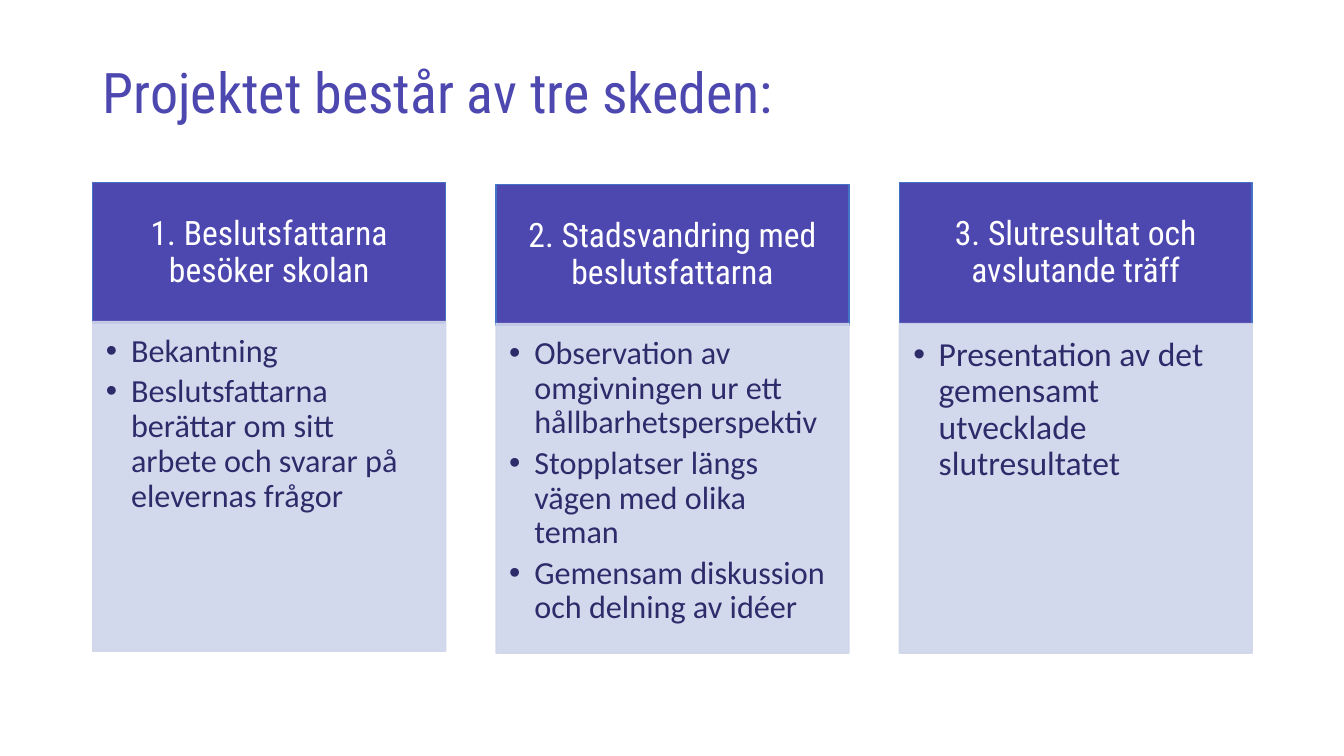
"""Build a slide that sets out the three stages of a school project."""
from lxml import etree
from pptx import Presentation
from pptx import util as u
from pptx.dml.color import RGBColor
from pptx.enum import shapes, text
from pptx.oxml.ns import qn

PX = 9144
COLORS = {"violet": "4D47B0", "edge": "4472C4", "panel": "CFD5EA",
          "ink": "2E2B6B", "white": "FFFFFF"}
COLUMN_LEFT, COLUMN_PITCH, COLUMN_WIDTH = 92, 400, 350
HEADER_HEIGHT, BODY_HEIGHT = 140, 327
STAGES = [
    {"heading": "1. Beslutsfattarna besöker skolan",
     "points": ["Bekantning",
                "Beslutsfattarna berättar om sitt arbete och svarar på elevernas frågor"],
     "header_top": 181, "body_top": 319, "size": 23, "insets": (13, 13, 18, 20)},
    {"heading": "2. Stadsvandring med beslutsfattarna",
     "points": ["Observation av omgivningen ur ett hållbarhetsperspektiv",
                "Stopplatser längs vägen med olika teman",
                "Gemensam diskussion och delning av idéer"],
     "header_top": 183, "body_top": 321, "size": 23, "insets": (13, 13, 18, 20)},
    {"heading": "3. Slutresultat och avslutande träff",
     "points": ["Presentation av det gemensamt utvecklade slutresultatet"],
     "header_top": 181, "body_top": 321, "size": 24, "insets": (14, 14, 19, 21)},
]


def px(length):
    return u.Emu(length * PX)


def color(name):
    return RGBColor.from_string(COLORS[name])


def apply(target, **values):
    for name, value in values.items():
        setattr(target, name, value)


def write(paragraph, words, font, size, ink):
    paragraph.line_spacing = 0.9
    run = paragraph.add_run()
    run.text = words
    apply(run.font, name=font, size=u.Pt(size))
    run.font.color.rgb = color(ink)


def add_title(slide, words):
    title = slide.shapes.title
    apply(title, left=px(92), top=px(40), width=px(1150), height=px(109))
    frame = title.text_frame
    apply(frame, vertical_anchor=text.MSO_ANCHOR.MIDDLE, auto_size=text.MSO_AUTO_SIZE.NONE)
    paragraph = frame.paragraphs[0]
    paragraph.alignment = text.PP_ALIGN.LEFT
    write(paragraph, words, "Roboto Condensed", 40, "violet")


def add_box(slide, left, top, height, fill, line, insets, anchor):
    box = slide.shapes.add_shape(shapes.MSO_SHAPE.RECTANGLE, px(left), px(top),
                                 px(COLUMN_WIDTH), px(height))
    box.shadow.inherit = False
    box.fill.solid()
    box.fill.fore_color.rgb = color(fill)
    box.line.color.rgb = color(line)
    box.line.width = u.Pt(1)
    sides = ("margin_left", "margin_top", "margin_right", "margin_bottom")
    apply(box.text_frame, word_wrap=True, vertical_anchor=anchor,
          **dict(zip(sides, map(px, insets))))
    return box


def set_opacity(box, percent):
    for tint in box._element.spPr.iter(qn("a:srgbClr")):
        etree.SubElement(tint, qn("a:alpha")).set("val", str(percent * 1000))


def add_bullet(paragraph):
    properties = paragraph._p.get_or_add_pPr()
    properties.set("marL", str(px(25)))
    properties.set("indent", str(px(-25)))
    etree.SubElement(properties, qn("a:buFont")).set("typeface", "Arial")
    etree.SubElement(properties, qn("a:buChar")).set("char", "•")


def add_header(slide, left, stage):
    header = add_box(slide, left, stage["header_top"], HEADER_HEIGHT, "violet", "edge",
                     (19, 11, 19, 11), text.MSO_ANCHOR.MIDDLE)
    paragraph = header.text_frame.paragraphs[0]
    paragraph.alignment = text.PP_ALIGN.CENTER
    write(paragraph, stage["heading"], "Roboto Condensed", 24, "white")


def add_body(slide, left, stage):
    body = add_box(slide, left, stage["body_top"], BODY_HEIGHT, "panel", "panel",
                   stage["insets"], text.MSO_ANCHOR.TOP)
    set_opacity(body, 90)
    frame = body.text_frame
    for index, point in enumerate(stage["points"]):
        paragraph = frame.add_paragraph() if index else frame.paragraphs[0]
        add_bullet(paragraph)
        apply(paragraph, level=1, alignment=text.PP_ALIGN.LEFT, space_after=u.Pt(4))
        write(paragraph, point, "Calibri", stage["size"], "ink")


def main():
    presentation = Presentation()
    apply(presentation, slide_width=px(1333), slide_height=px(750))
    slide = presentation.slides.add_slide(presentation.slide_layouts[5])
    add_title(slide, "Projektet består av tre skeden:")
    for column, stage in enumerate(STAGES):
        left = COLUMN_LEFT + column * COLUMN_PITCH
        add_header(slide, left, stage)
        add_body(slide, left, stage)
    presentation.save("out.pptx")


if __name__ == "__main__":
    main()
